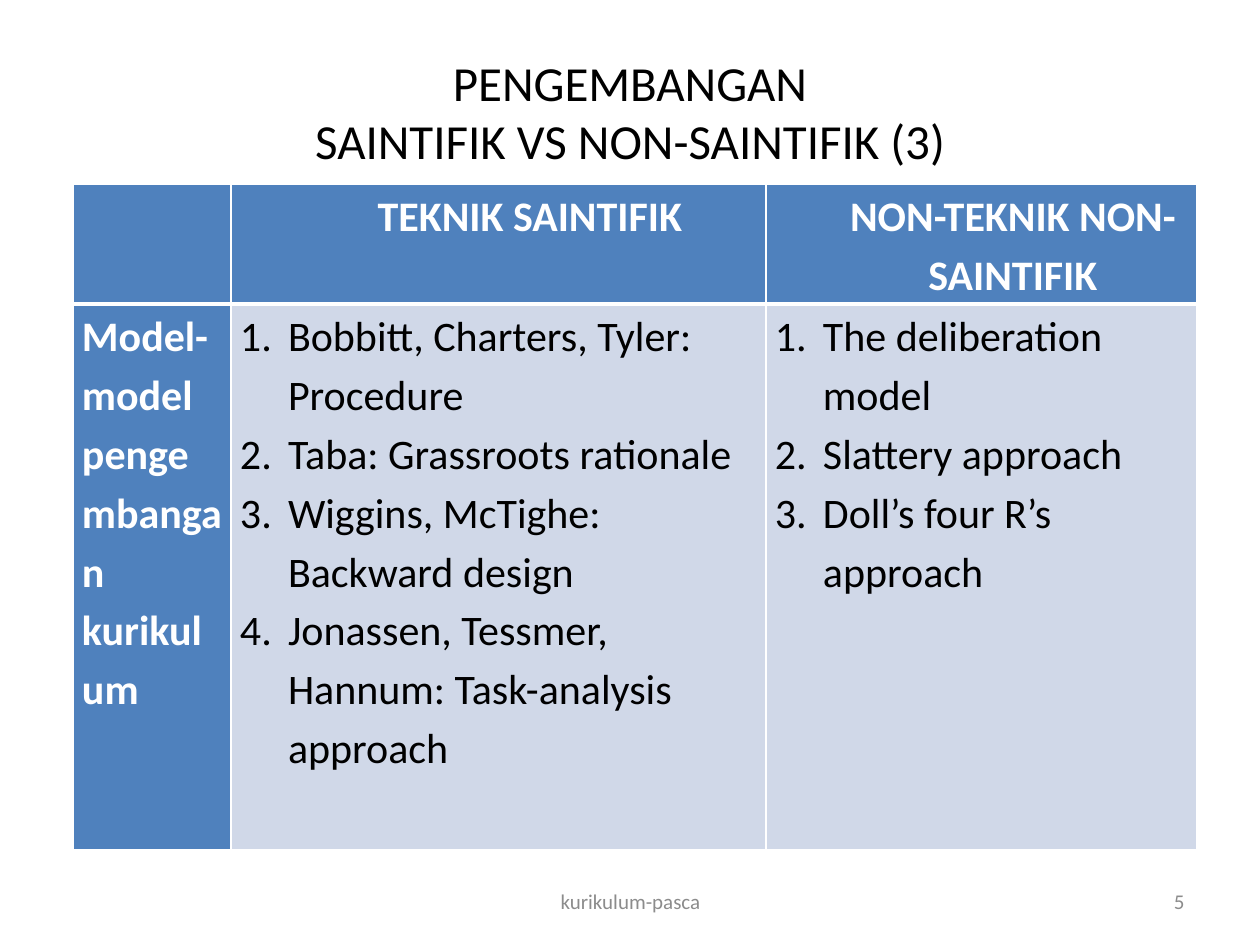
from collections import namedtuple
from dataclasses import dataclass
from lxml.etree import SubElement
from pptx import Presentation
from pptx.dml.color import RGBColor
from pptx.enum.text import MSO_ANCHOR, PP_ALIGN
from pptx.oxml import parse_xml
from pptx.oxml.ns import nsdecls, qn
from pptx.util import Pt

Box = namedtuple("Box", "x y w h")


@dataclass(frozen=True)
class Theme:
    font: str = "Calibri"
    blue: str = "4F81BD"
    pale: str = "D0D8E8"
    white: str = "FFFFFF"
    black: str = "000000"
    gray: str = "8C8C8C"
    title: int = 28
    body: int = 24
    small: int = 12


THEME = Theme()
COLS = (158, 535, 431)
ROWS = (120, 546)
HEADS = ("", "TEKNIK SAINTIFIK", "NON-TEKNIK NON-SAINTIFIK")
LABEL = "Model-model pengembangan kurikulum"
MODELS = (
    (
        "Bobbitt, Charters, Tyler: Procedure",
        "Taba: Grassroots rationale",
        "Wiggins, McTighe: Backward design",
        "Jonassen, Tessmer, Hannum: Task-analysis approach",
    ),
    (
        "The deliberation model",
        "Slattery approach",
        "Doll’s four R’s approach",
    ),
)


def px(num):
    return round(num * 914400 / 126)


def write(frame, *lines, size=THEME.body, color=THEME.black, bold=False,
          align=PP_ALIGN.LEFT, space=None, left=0, hang=0, list_type=None):
    frame.word_wrap = True
    for i, line in enumerate(lines):
        para = frame.add_paragraph() if i else frame.paragraphs[0]
        para.text = line
        para.alignment = align
        if space:
            para.line_spacing = space
        font = para.font
        font.name = THEME.font
        font.size = Pt(size)
        font.bold = bold
        font.color.rgb = RGBColor.from_string(color)
        props = para._p.get_or_add_pPr()
        props.set("marL", str(px(left)))
        props.set("indent", str(px(-hang)))
        if list_type:
            SubElement(props, qn("a:buFont"), typeface="+mj-lt")
            SubElement(props, qn("a:buAutoNum"), type=list_type)
        for run in para.runs:
            run.font.name = THEME.font
            run.font.size = Pt(size)
            run.font.bold = bold
            run.font.color.rgb = RGBColor.from_string(color)
        for tail in para._p.findall(qn("a:defRPr")):
            para._p.remove(tail)


def place(shape, box):
    shape.left, shape.top, shape.width, shape.height = map(px, box)


def title(slide, box):
    shape = slide.shapes.title
    place(shape, box)
    shape.text_frame.vertical_anchor = MSO_ANCHOR.MIDDLE
    write(shape.text_frame, "PENGEMBANGAN\vSAINTIFIK VS NON-SAINTIFIK (3)",
          size=THEME.title, align=PP_ALIGN.CENTER)


def border(cell, top, base):
    props = cell._tc.get_or_add_tcPr()
    for i, (side, wide) in enumerate(zip("LRTB", (1, 1, top, base))):
        props.insert(i, parse_xml(
            f'<a:ln{side} {nsdecls("a")} w="{Pt(wide)}"><a:solidFill>'
            f'<a:srgbClr val="{THEME.white}"/></a:solidFill></a:ln{side}>'))


def grid(slide, box):
    table = slide.shapes.add_table(
        len(ROWS), len(COLS), *map(px, box)).table
    table.first_col = True
    for col, wide in zip(table.columns, COLS):
        col.width = px(wide)
    for row, high in zip(table.rows, ROWS):
        row.height = px(high)
    for r in range(len(ROWS)):
        for c in range(len(COLS)):
            cell = table.cell(r, c)
            cell.margin_left = cell.margin_right = px(9)
            cell.margin_top = cell.margin_bottom = 0
            cell.fill.solid()
            cell.fill.fore_color.rgb = RGBColor.from_string(
                THEME.pale if r and c else THEME.blue)
            border(cell, 3 if r else 1, 1 if r else 3)
    for c, head in enumerate(HEADS):
        if head:
            write(table.cell(0, c).text_frame, head, color=THEME.white,
                  bold=True, align=PP_ALIGN.CENTER, space=1.15, left=63)
    write(table.cell(1, 0).text_frame, LABEL, color=THEME.white,
          bold=True, space=1.15)
    for c, items in enumerate(MODELS, 1):
        write(table.cell(1, c).text_frame, *items, space=1.15,
              left=48, hang=48, list_type="arabicPeriod")


def foot(slide, box):
    parts = (
        ("kurikulum-pasca", 368, 399, PP_ALIGN.CENTER),
        ("5", box.w - 294, 294, PP_ALIGN.RIGHT),
    )
    for text, x, wide, align in parts:
        shape = slide.shapes.add_textbox(
            *map(px, (box.x + x, box.y, wide, box.h)))
        shape.text_frame.vertical_anchor = MSO_ANCHOR.MIDDLE
        write(shape.text_frame, text, size=THEME.small,
              color=THEME.gray, align=align)


def main():
    deck = Presentation()
    deck.slide_width, deck.slide_height = px(1260), px(945)
    slide = deck.slides.add_slide(deck.slide_layouts[5])
    title(slide, Box(63, 38, 1134, 146))
    grid(slide, Box(73, 184, sum(COLS), sum(ROWS)))
    foot(slide, Box(63, 876, 1134, 50))
    deck.save("out.pptx")


if __name__ == "__main__":
    main()
